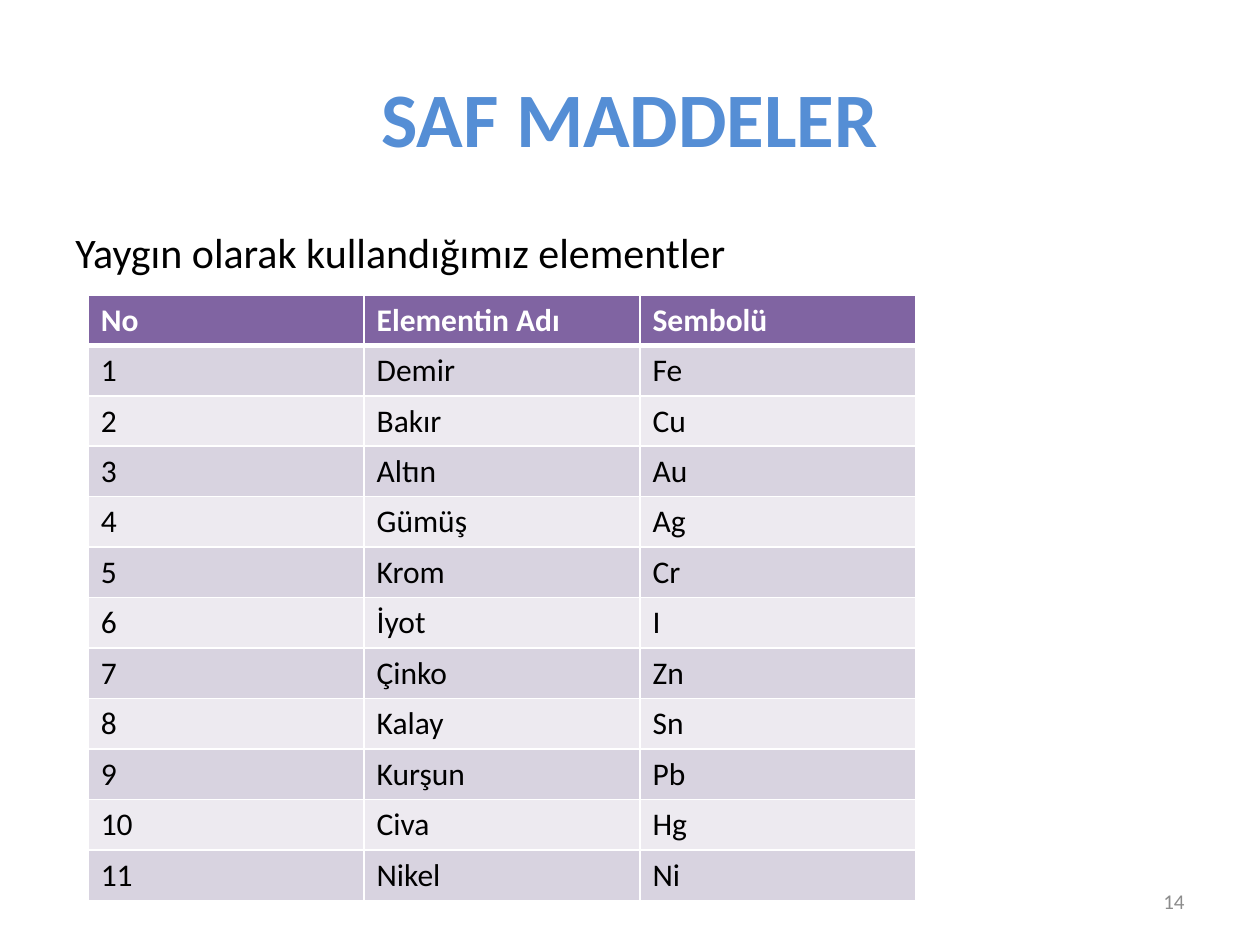
from typing import NamedTuple

import pptx
import pptx.dml.color
import pptx.enum.text
import pptx.oxml.ns
import pptx.util
from lxml import etree

Inches = pptx.util.Inches
Pt = pptx.util.Pt
RGBColor = pptx.dml.color.RGBColor
Align = pptx.enum.text.PP_ALIGN
Anchor = pptx.enum.text.MSO_ANCHOR
qn = pptx.oxml.ns.qn

FONT = "Calibri"
BLACK = RGBColor(0x00, 0x00, 0x00)
WHITE = RGBColor(0xFF, 0xFF, 0xFF)
BLUE = RGBColor(0x55, 0x8E, 0xD5)
GRAY = RGBColor(0x8C, 0x8C, 0x8C)
PURPLE = RGBColor(0x80, 0x64, 0xA2)
DARK_BAND = RGBColor(0xD8, 0xD3, 0xE0)
LIGHT_BAND = RGBColor(0xED, 0xEA, 0xF0)

COLUMN_WIDTH = 2.19
ROW_HEIGHT = 0.39
THIN, THICK = 1, 3


class Element(NamedTuple):
    name: str
    symbol: str


HEADINGS = ("No", "Elementin Adı", "Sembolü")
ELEMENTS = (
    Element("Demir", "Fe"),
    Element("Bakır", "Cu"),
    Element("Altın", "Au"),
    Element("Gümüş", "Ag"),
    Element("Krom", "Cr"),
    Element("İyot", "I"),
    Element("Çinko", "Zn"),
    Element("Kalay", "Sn"),
    Element("Kurşun", "Pb"),
    Element("Civa", "Hg"),
    Element("Nikel", "Ni"),
)


def place(shape, left: float, top: float, width: float, height: float) -> None:
    shape.left, shape.top = Inches(left), Inches(top)
    shape.width, shape.height = Inches(width), Inches(height)


def write(frame, text: str, size: float, color: RGBColor, bold: bool = False,
          align=Align.LEFT):
    frame.text = text
    paragraph = frame.paragraphs[0]
    paragraph.alignment = align
    font = paragraph.font
    font.name, font.size, font.bold = FONT, Pt(size), bold
    font.color.rgb = color
    return paragraph


def add_text(page, position: tuple, text: str, size: float, color: RGBColor,
             align=Align.LEFT, anchor=Anchor.TOP):
    box = page.shapes.add_textbox(0, 0, 0, 0)
    place(box, *position)
    box.text_frame.word_wrap = True
    box.text_frame.vertical_anchor = anchor
    return write(box.text_frame, text, size, color, align=align)


def add_borders(cell, top: float, bottom: float) -> None:
    """Draw white cell borders, with the top and bottom widths in points."""
    properties = cell._tc.get_or_add_tcPr()
    widths = {"a:lnL": THIN, "a:lnR": THIN, "a:lnT": top, "a:lnB": bottom}
    for tag, width in widths.items():
        line = etree.SubElement(properties, qn(tag), w=str(Pt(width)))
        fill = etree.SubElement(line, qn("a:solidFill"))
        etree.SubElement(fill, qn("a:srgbClr"), val=str(WHITE))


def add_element_table(page) -> None:
    rows = [HEADINGS]
    rows += [(str(number), *element) for number, element in enumerate(ELEMENTS, 1)]
    table = page.shapes.add_table(
        len(rows), len(HEADINGS), Inches(0.7), Inches(2.34),
        Inches(COLUMN_WIDTH * len(HEADINGS)), Inches(ROW_HEIGHT * len(rows))).table
    for column in table.columns:
        column.width = Inches(COLUMN_WIDTH)
    for r, values in enumerate(rows):
        table.rows[r].height = Inches(ROW_HEIGHT)
        header = r == 0
        band = PURPLE if header else DARK_BAND if r % 2 else LIGHT_BAND
        for c, value in enumerate(values):
            cell = table.cell(r, c)
            add_borders(cell, top=THICK if r == 1 else THIN,
                        bottom=THICK if header else THIN)
            cell.fill.solid()
            cell.fill.fore_color.rgb = band
            write(cell.text_frame, value, 18, WHITE if header else BLACK, bold=header)


def main() -> None:
    deck = pptx.Presentation()
    deck.slide_width, deck.slide_height = Inches(10), Inches(7.5)
    page = deck.slides.add_slide(deck.slide_layouts.get_by_name("Title Only"))

    title = page.shapes.title
    place(title, 0.5, 0.3, 9, 1.25)
    title.text_frame.vertical_anchor = Anchor.MIDDLE
    write(title.text_frame, "SAF MADDELER", 44, BLUE, bold=True, align=Align.CENTER)

    intro = add_text(page, (0.5, 1.75, 8.95, 5.52),
                     "Yaygın olarak kullandığımız elementler", 24, BLACK)
    indents = intro._p.get_or_add_pPr()
    indents.set("marL", str(Inches(0.38)))
    indents.set("indent", str(Inches(-0.38)))

    add_element_table(page)
    add_text(page, (7.17, 6.95, 2.33, 0.4), "14", 12, GRAY,
             align=Align.RIGHT, anchor=Anchor.MIDDLE)
    deck.save("out.pptx")


if __name__ == "__main__":
    main()
